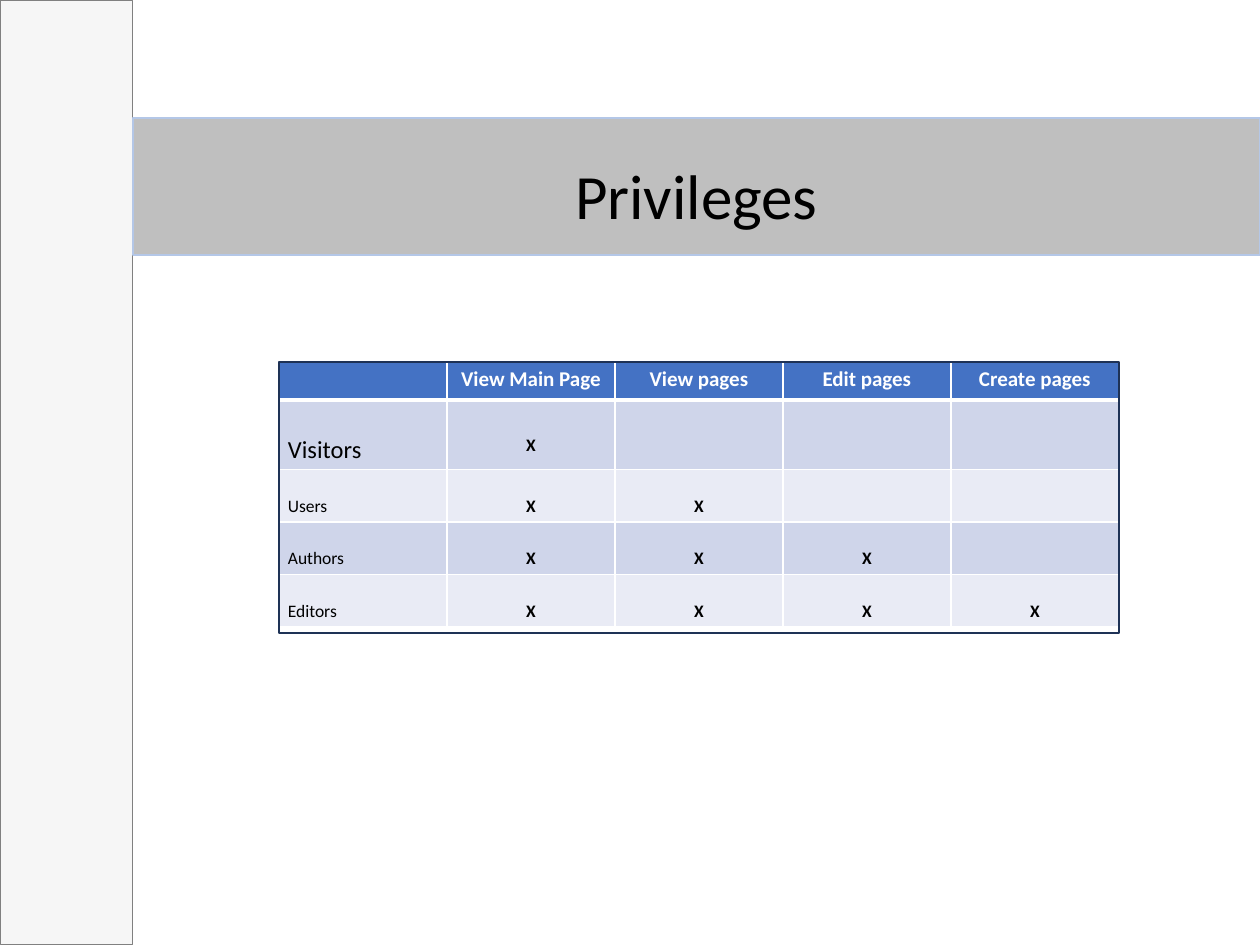
from dataclasses import dataclass
from lxml import etree
from pptx import Presentation
from pptx.dml.color import RGBColor
from pptx.enum.shapes import MSO_SHAPE
from pptx.enum.text import MSO_ANCHOR, MSO_AUTO_SIZE, PP_ALIGN
from pptx.oxml.ns import qn
from pptx.util import Emu, Pt

RECT = MSO_SHAPE.RECTANGLE
MID, TOP = MSO_ANCHOR.MIDDLE, MSO_ANCHOR.TOP
LEFT, MIDST = PP_ALIGN.LEFT, PP_ALIGN.CENTER
FIXED = MSO_AUTO_SIZE.NONE
SCALE = 914400 / 126


def px(n):
    return Emu(round(n * SCALE))


def put(item, vals):
    for key, val in vals.items():
        setattr(item, key, val)


@dataclass(frozen=True)
class Theme:
    face: str = "Calibri"
    ink: str = "000000"
    white: str = "FFFFFF"
    side: str = "F6F6F6"
    gray: str = "808080"
    band: str = "BFBFBF"
    pale: str = "B4C7E7"
    head: str = "4472C4"
    rows: tuple = ("CFD5EA", "E9EBF5")
    frame: str = "1E3256"
    title: int = 36
    label: int = 12
    big: int = 14
    small: int = 10


class Deck:
    def __init__(self, theme, wide, high):
        self.theme = theme
        self.file = Presentation()
        put(self.file, {"slide_width": px(wide), "slide_height": px(high)})
        self.slide = self.file.slides.add_slide(self.file.slide_layouts[5])

    def place(self, shape, box):
        put(shape, dict(zip(("left", "top", "width", "height"), map(px, box))))

    def paint(self, shape, fill, line, width):
        if fill:
            shape.fill.solid()
            shape.fill.fore_color.rgb = RGBColor.from_string(fill)
        else:
            shape.fill.background()
        shape.line.color.rgb = RGBColor.from_string(line)
        shape.line.width = Pt(width)

    def label(self, para, text, size, color, bold=False, **form):
        put(para, form)
        if not text:
            etree.SubElement(para._p, qn("a:endParaRPr"), sz=str(size * 100))
            return
        run = para.add_run()
        run.text = text
        put(run.font, {"name": self.theme.face, "size": Pt(size), "bold": bold})
        run.font.color.rgb = RGBColor.from_string(color)

    def rect(self, box, fill, line, width):
        shape = self.slide.shapes.add_shape(RECT, *map(px, box))
        shape.shadow.inherit = False
        self.paint(shape, fill, line, width)

    def title(self, text, box):
        t = self.theme
        shape = self.slide.shapes.title
        self.slide.shapes._spTree.append(shape._element)
        self.place(shape, box)
        self.paint(shape, t.band, t.pale, 0.75)
        put(shape.text_frame, {"vertical_anchor": MID, "auto_size": FIXED, "word_wrap": True})
        self.label(shape.text_frame.paragraphs[0], text, t.title, t.ink,
                   alignment=MIDST, line_spacing=1.2)

    def edges(self, cell, widths):
        props = cell._tc.get_or_add_tcPr()
        for side, width in zip("LRTB", widths):
            line = etree.SubElement(props, qn("a:ln" + side), w=str(Pt(width)))
            fill = etree.SubElement(line, qn("a:solidFill"))
            etree.SubElement(fill, qn("a:srgbClr"), val=self.theme.white)

    def cell(self, cell, text, row, col):
        t = self.theme
        head = row == 0
        self.edges(cell, (1, 1, 3 if row == 1 else 1, 3 if head else 1))
        cell.fill.solid()
        cell.fill.fore_color.rgb = RGBColor.from_string(
            t.head if head else t.rows[(row - 1) % 2])
        put(cell, {"margin_left": px(9), "margin_right": px(9), "margin_top": px(5),
                   "margin_bottom": px(5), "vertical_anchor": TOP if head else MID})
        form = {"alignment": MIDST if head or col else LEFT}
        if text and not head:
            form |= {"line_spacing": 2.0, "space_before": Pt(12), "space_after": Pt(12)}
        size = t.label if head else t.big if (row, col) == (1, 0) else t.small
        self.label(cell.text_frame.paragraphs[0], text, size,
                   t.white if head else t.ink, head or col > 0, **form)

    def table(self, data, box, highs):
        grid = self.slide.shapes.add_table(len(data), len(data[0]), *map(px, box)).table
        for col in grid.columns:
            col.width = px(box[2] // len(data[0]))
        for r, (line, high) in enumerate(zip(data, highs)):
            grid.rows[r].height = px(high)
            for c, text in enumerate(line):
                self.cell(grid.cell(r, c), text, r, c)


def main():
    theme = Theme()
    deck = Deck(theme, 1260, 945)
    heads = ["View Main Page", "View pages", "Edit pages", "Create pages"]
    roles = ["Visitors", "Users", "Authors", "Editors"]
    data = [["", *heads]]
    for rank, role in enumerate(roles, 1):
        data.append([role] + ["X"] * rank + [""] * (len(heads) - rank))

    deck.rect((0, 0, 133, 945), theme.side, theme.gray, 0.5)
    deck.table(data, (279, 362, 840, 237), (38, 58, 47, 47, 47))
    deck.title("Privileges", (133, 118, 1127, 137))
    deck.rect((279, 362, 840, 271), None, theme.frame, 1)
    deck.file.save("out.pptx")


if __name__ == "__main__":
    main()
